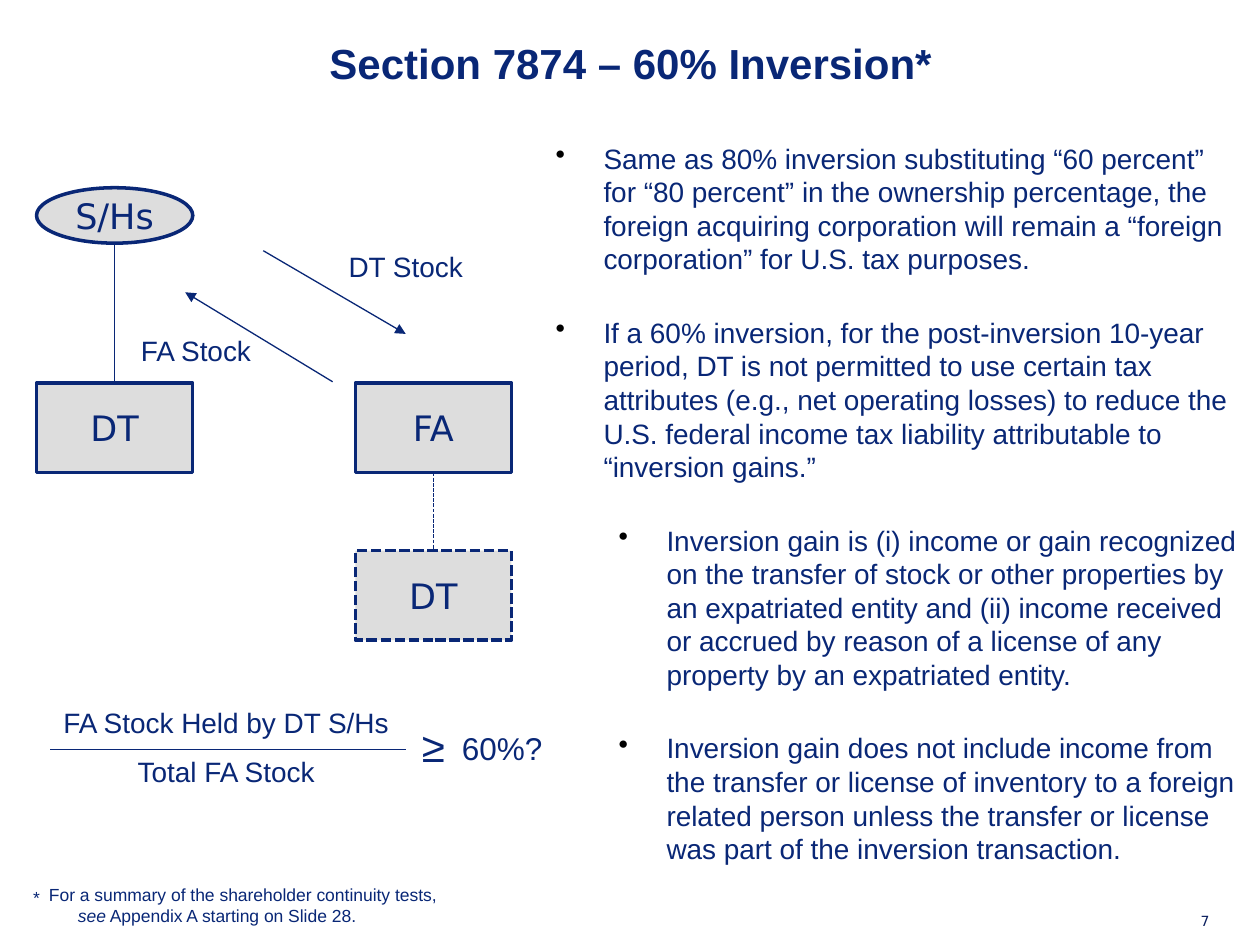
from lxml import etree
from pptx import Presentation
from pptx import util as u
from pptx.dml.color import RGBColor
from pptx.enum import dml, shapes, text
from pptx.oxml import ns

Inches, Pt = u.Inches, u.Pt
COLORS = {"navy": "092776", "grey": "DDDDDD", "bullet": "000000", "number": "091D5D"}
CENTER, LEFT, RIGHT = text.PP_ALIGN.CENTER, text.PP_ALIGN.LEFT, text.PP_ALIGN.RIGHT
BULLETS = [
    (0, "Same as 80% inversion substituting “60 percent” for “80 percent” in the ownership "
        "percentage, the foreign acquiring corporation will remain a “foreign corporation” "
        "for U.S. tax purposes."),
    (0, "If a 60% inversion, for the post-inversion 10-year period, DT is not permitted to use "
        "certain tax attributes (e.g., net operating losses) to reduce the U.S. federal income "
        "tax liability attributable to “inversion gains.”"),
    (1, "Inversion gain is (i) income or gain recognized on the transfer of stock or other "
        "properties by an expatriated entity and (ii) income received or accrued by reason of "
        "a license of any property by an expatriated entity."),
    (1, "Inversion gain does not include income from the transfer or license of inventory to a "
        "foreign related person unless the transfer or license was part of the inversion "
        "transaction."),
]


def rgb(name):
    return RGBColor.from_string(COLORS[name])


def apply(target, values):
    for name, value in values.items():
        setattr(target, name, value)


def add_span(para, words, size, font="Arial", color="navy", **extra):
    span = para.add_run()
    span.text = words
    apply(span.font, {"size": Pt(size), "name": font, **extra})
    span.font.color.rgb = rgb(color)


def set_indent(para, left, first):
    props = para._p.get_or_add_pPr()
    props.set("marL", str(Inches(left)))
    props.set("indent", str(Inches(first)))
    return props


def add_label(page, box, words, size, align=CENTER, wrap=False, inset=None, **extra):
    """Text box with one paragraph for each line of words."""
    frame = page.shapes.add_textbox(*map(Inches, box)).text_frame
    frame.word_wrap = wrap
    if inset is not None:
        sides = ("left", "top", "right", "bottom")
        apply(frame, {f"margin_{side}": Inches(inset) for side in sides})
    for index, line in enumerate(words.split("\n")):
        para = frame.add_paragraph() if index else frame.paragraphs[0]
        apply(para, {"alignment": align, "space_before": Pt(9 if index else 0)})
        add_span(para, line, size, **extra)
    return frame


def add_entity(page, box, name, kind=shapes.MSO_SHAPE.RECTANGLE, dashed=False):
    entity = page.shapes.add_shape(kind, *map(Inches, box))
    entity.shadow.inherit = False
    entity.fill.solid()
    entity.fill.fore_color.rgb = rgb("grey")
    entity.line.color.rgb = rgb("navy")
    entity.line.width = Pt(2)
    if dashed:
        entity.line.dash_style = dml.MSO_LINE.SQUARE_DOT
    frame = entity.text_frame
    frame.vertical_anchor = text.MSO_ANCHOR.MIDDLE
    frame.paragraphs[0].alignment = CENTER
    add_span(frame.paragraphs[0], name, 20, "DejaVu Sans")
    return entity


def add_line(page, start, end, arrow=False, dashed=False):
    line = page.shapes.add_connector(
        shapes.MSO_CONNECTOR.STRAIGHT, *map(Inches, (*start, *end)))
    line.line.color.rgb = rgb("navy")
    line.line.width = Pt(0.75)
    if dashed:
        line.line.dash_style = dml.MSO_LINE.SQUARE_DOT
    if arrow:
        etree.SubElement(line.line._get_or_add_ln(), ns.qn("a:tailEnd"), type="triangle")
    etree.SubElement(line._element.spPr, ns.qn("a:effectLst"))
    return line


def fill_title(page, box, words):
    title = page.shapes.title
    apply(title, dict(zip(("left", "top", "width", "height"), map(Inches, box))))
    title.text_frame.vertical_anchor = text.MSO_ANCHOR.TOP
    para = title.text_frame.paragraphs[0]
    para.alignment = CENTER
    add_span(para, words, 24, bold=True)


def add_structure(page, box):
    """Ownership chart: shareholders, DT and FA, with the stock exchange."""
    left, top, width, height = box
    wide, tall, oval = 1.24, 0.71, 0.44
    right, middle, bottom = left + width - wide, top + 1.55, top + height - tall
    add_entity(page, (left, top, wide, oval), "S/Hs", shapes.MSO_SHAPE.OVAL)
    target = add_entity(page, (left, middle, wide, tall), "DT")
    acquirer = add_entity(page, (right, middle, wide, tall), "FA")
    subsidiary = add_entity(page, (right, bottom, wide, tall), "DT", dashed=True)

    # Ownership lines
    axis = left + wide / 2
    add_line(page, (axis, top + oval), (axis, middle)).end_connect(target, 0)
    axis = right + wide / 2
    held = add_line(page, (axis, middle + tall), (axis, bottom), dashed=True)
    held.begin_connect(acquirer, 2)
    held.end_connect(subsidiary, 0)

    # Stock exchange
    add_line(page, (left + 1.8, top + 0.5), (left + 2.93, top + 1.16), arrow=True)
    add_line(page, (left + 2.35, top + 1.54), (left + 1.18, top + 0.83), arrow=True)
    add_label(page, (left + 2.37, top + 0.44, 1.12, 0.37), "DT Stock", 16)
    add_label(page, (left + 0.72, top + 1.11, 1.09, 0.37), "FA Stock", 16)


def add_ratio(page, box):
    left, top, width, height = box
    bar = top + 0.4
    add_label(page, (left - 0.01, top, 2.81, height),
              "FA Stock Held by DT S/Hs\nTotal FA Stock", 16)
    add_line(page, (left, bar), (left + 2.82, bar))
    add_label(page, (left + 2.76, top + 0.12, 0.56, 0.5), "≥", 24)
    add_label(page, (left + width - 0.86, top + 0.19, 0.85, 0.4), "60%?", 18)


def add_bullets(page, box):
    frame = page.shapes.add_textbox(*map(Inches, box)).text_frame
    apply(frame, {"word_wrap": True, "margin_left": 0, "margin_top": 0,
                  "margin_right": 0, "margin_bottom": 0})
    for index, (level, words) in enumerate(BULLETS):
        para = frame.add_paragraph() if index else frame.paragraphs[0]
        apply(para, {"level": level, "alignment": LEFT,
                     "space_before": Pt(22.8 if index else 0)})
        props = set_indent(para, 0.38 + 0.5 * level, -0.38)
        tint = etree.SubElement(props, ns.qn("a:buClr"))
        etree.SubElement(tint, ns.qn("a:srgbClr"), val=COLORS["bullet"])
        etree.SubElement(props, ns.qn("a:buChar"), char="•")
        add_span(para, words, 16)


def add_footer(page, box):
    left, top, width, height = box
    add_label(page, (left, top + 0.02, 0.26, 0.27), "*", 10)
    note = add_label(page, (left + 0.13, top, 3.4, height),
                     "For a summary of the shareholder continuity tests, ", 10, LEFT, wrap=True)
    para = note.paragraphs[0]
    set_indent(para, 0.23, -0.23)
    add_span(para, "see", 10, italic=True)
    add_span(para, " Appendix A starting on Slide 28.", 10)
    add_label(page, (left + width - 1, top + 0.27, 1, 0.13), "7", 8, RIGHT, inset=0,
              wrap=True, font="DejaVu Sans", color="number")


def main():
    deck = Presentation()
    deck.slide_width, deck.slide_height = Inches(10), Inches(7.5)
    page = deck.slides.add_slide(deck.slide_layouts[5])
    fill_title(page, (0.29, 0.25, 9.43, 0.83), "Section 7874 – 60% Inversion*")
    add_bullets(page, (4.41, 1.12, 5.42, 5.8))
    add_structure(page, (0.29, 1.49, 3.77, 3.59))
    add_ratio(page, (0.4, 5.55, 4.02, 0.77))
    add_footer(page, (0.16, 6.97, 9.44, 0.44))
    deck.save("out.pptx")


if __name__ == "__main__":
    main()
